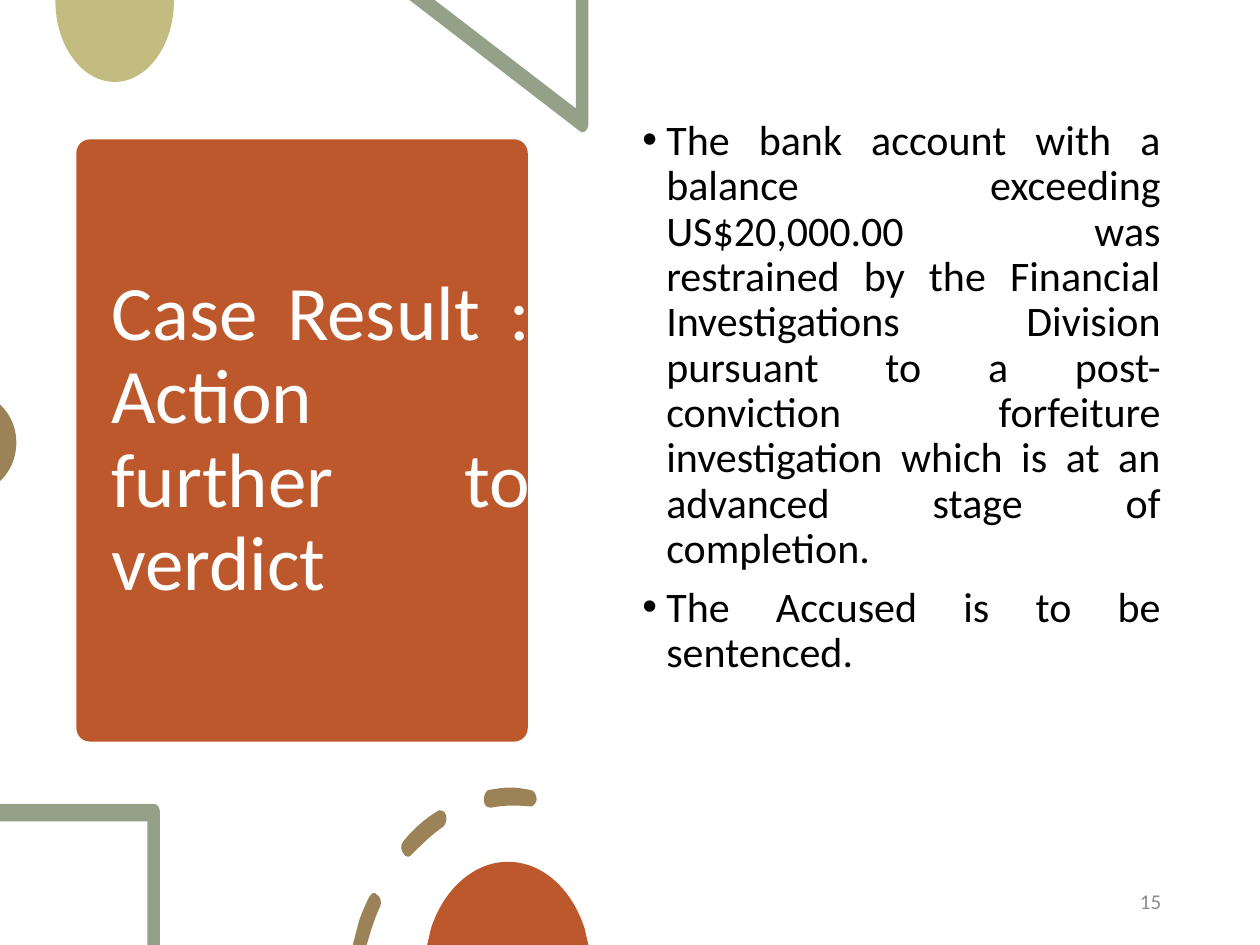
"""Build the case result slide with its decorative cut-off shapes."""
from dataclasses import dataclass

from lxml import etree
from pptx import Presentation
from pptx import util as u
from pptx.dml.color import RGBColor
from pptx.enum import shapes, text
from pptx.oxml.ns import qn

RUST, OLIVE, SAGE, BROWN = "BD582C", "C2BC80", "94A088", "9B8357"
WHITE, BLACK, GREY = "FFFFFF", "000000", "8C8C8C"
ALIGN, ANCHOR = text.PP_ALIGN, text.MSO_ANCHOR


@dataclass
class Ornament:
    """Closed outlines in inches: pairs are corners, sextuples are Bezier curves."""
    color: str
    outlines: list


ORNAMENTS = [
    Ornament(OLIVE, [[(1.38, 0), (0.44, 0), (0.44, 0.01),
                      (0.44, 0.36, 0.65, 0.65, 0.91, 0.65),
                      (1.17, 0.65, 1.38, 0.36, 1.38, 0.01)]]),
    Ornament(SAGE, [[(4.67, 0), (4.57, 0), (4.57, 0.86), (3.45, 0), (3.25, 0), (4.6, 1.04),
                     (4.61, 1.05, 4.61, 1.05, 4.62, 1.05),
                     (4.65, 1.05, 4.67, 1.02, 4.67, 0.98)]]),
    Ornament(BROWN, [[(0, 3.21), (0, 3.82), (0.01, 3.81),
                      (0.08, 3.74, 0.13, 3.64, 0.13, 3.51),
                      (0.13, 3.39, 0.08, 3.29, 0.01, 3.22)]]),
    Ornament(SAGE, [[(1.22, 6.38), (0, 6.38), (0, 6.52), (1.17, 6.52), (1.17, 7.5),
                     (1.27, 7.5), (1.27, 6.45), (1.27, 6.41, 1.25, 6.38, 1.22, 6.38)]]),
    Ornament(BROWN, [
        [(2.98, 7.09), (2.96, 7.08, 2.94, 7.1, 2.93, 7.12),
         (2.9, 7.18, 2.87, 7.25, 2.85, 7.31), (2.8, 7.5), (2.91, 7.5), (2.95, 7.37),
         (2.97, 7.31, 2.99, 7.25, 3.02, 7.19), (3.03, 7.16, 3.02, 7.11, 2.99, 7.1),
         (2.99, 7.09, 2.98, 7.09, 2.98, 7.09)],
        [(3.49, 6.43), (3.48, 6.43, 3.48, 6.43, 3.47, 6.44),
         (3.37, 6.5, 3.28, 6.58, 3.2, 6.68), (3.18, 6.7, 3.18, 6.75, 3.2, 6.77),
         (3.21, 6.79, 3.22, 6.8, 3.24, 6.8), (3.25, 6.8, 3.26, 6.79, 3.27, 6.78),
         (3.35, 6.7, 3.43, 6.62, 3.52, 6.56), (3.54, 6.54, 3.55, 6.5, 3.54, 6.47),
         (3.53, 6.44, 3.51, 6.43, 3.49, 6.43)],
        [(4.05, 6.25), (3.99, 6.25, 3.94, 6.26, 3.88, 6.27),
         (3.86, 6.27, 3.84, 6.31, 3.84, 6.35), (3.84, 6.38, 3.86, 6.41, 3.89, 6.41),
         (3.89, 6.41, 3.9, 6.41, 3.9, 6.41), (4, 6.39, 4.1, 6.39, 4.2, 6.4),
         (4.23, 6.41, 4.25, 6.38, 4.26, 6.35), (4.26, 6.31, 4.24, 6.27, 4.21, 6.27),
         (4.16, 6.26, 4.1, 6.25, 4.05, 6.25)]]),
    Ornament(RUST, [[(4.03, 6.84), (3.76, 6.84, 3.52, 7.06, 3.42, 7.37), (3.39, 7.5),
                     (4.67, 7.5), (4.64, 7.37), (4.54, 7.06, 4.31, 6.84, 4.03, 6.84)]]),
]

TITLE = "Case Result : Action further to verdict"
POINTS = [
    "The bank account with a balance exceeding US$20,000.00 was restrained by the "
    "Financial Investigations Division pursuant to a post-conviction forfeiture "
    "investigation which is at an advanced stage of completion.",
    "The Accused is to be sentenced.",
]


def rgb(color: str) -> RGBColor:
    """Turn a hex string into a colour."""
    return RGBColor.from_string(color)


def length(inches: float) -> u.Length:
    """Turn inches into a length."""
    return u.Cm(inches * 2.54)


def paint(sp, color: str) -> None:
    """Fill a shape flat, with neither line nor shadow."""
    sp.shadow.inherit = False
    sp.fill.solid()
    sp.fill.fore_color.rgb = rgb(color)
    sp.line.fill.background()


def end_point(part: tuple) -> tuple:
    """Return where a corner or curve ends."""
    return length(part[-2]), length(part[-1])


def bend(sp, parts: list) -> None:
    """Turn the straight segments that stand for curves into Bezier curves."""
    for segment, part in zip(list(sp.element.iter(qn("a:lnTo"))), parts):
        if len(part) == 2:
            continue
        segment.clear()
        curve = etree.SubElement(segment.getparent(), qn("a:cubicBezTo"))
        for x, y in zip(part[::2], part[1::2]):
            pt = etree.SubElement(curve, qn("a:pt"))
            pt.set("x", str(length(x) - sp.left))
            pt.set("y", str(length(y) - sp.top))
        segment.getparent().replace(segment, curve)


def add_ornament(s, ornament: Ornament) -> None:
    """Draw all outlines of an ornament as one freeform."""
    builder = None
    for start, *rest in ornament.outlines:
        if builder is None:
            builder = s.shapes.build_freeform(*end_point(start))
        else:
            builder.move_to(*end_point(start))
        builder.add_line_segments([end_point(part) for part in rest], close=True)
    sp = builder.convert_to_shape()
    bend(sp, [part for outline in ornament.outlines for part in outline[1:]])
    paint(sp, ornament.color)


def write(sp, lines: list, size: float, color: str, anchor, **formats) -> None:
    """Write paragraphs that share one format into a shape."""
    tf = sp.text_frame
    tf.word_wrap = True
    tf.auto_size = text.MSO_AUTO_SIZE.NONE
    tf.vertical_anchor = anchor
    for i, line in enumerate(lines):
        p = tf.paragraphs[0] if i == 0 else tf.add_paragraph()
        for name, value in formats.items():
            setattr(p, name, value)
        r = p.add_run()
        r.text = line
        for name, value in {"name": "Calibri", "size": u.Pt(size)}.items():
            setattr(r.font, name, value)
        r.font.color.rgb = rgb(color)


def add_bullet(p) -> None:
    """Give a paragraph a round bullet and a hanging indent."""
    pr = p._p.get_or_add_pPr()
    pr.set("marL", str(length(0.19)))
    pr.set("indent", str(-length(0.19)))
    etree.SubElement(pr, qn("a:buFont")).set("typeface", "Arial")
    etree.SubElement(pr, qn("a:buChar")).set("char", "•")


def main() -> None:
    """Build and save the slide."""
    prs = Presentation()
    prs.slide_width, prs.slide_height = u.Cm(25.4), u.Cm(19.05)
    s = prs.slides.add_slide(prs.slide_layouts[5])

    card = s.shapes.add_shape(shapes.MSO_SHAPE.ROUNDED_RECTANGLE,
                              u.Cm(1.54), u.Cm(2.81), u.Cm(9.1), u.Cm(12.14))
    card.adjustments[0] = 0.03
    paint(card, RUST)

    title = s.shapes.title
    box = {"left": 1.99, "top": 3.09, "width": 8.96, "height": 11.58}
    for name, value in box.items():
        setattr(title, name, u.Cm(value))
    title.element.addprevious(card.element)
    write(title, [TITLE], 44, WHITE, ANCHOR.MIDDLE, alignment=ALIGN.JUSTIFY, line_spacing=0.9)

    for ornament in ORNAMENTS:
        add_ornament(s, ornament)

    body = s.shapes.add_textbox(u.Cm(12.7), u.Cm(2.28), u.Cm(10.95), u.Cm(13.59))
    write(body, POINTS, 24, BLACK, ANCHOR.TOP, alignment=ALIGN.JUSTIFY,
          line_spacing=0.9, space_before=u.Pt(7.5))
    for p in body.text_frame.paragraphs:
        add_bullet(p)

    number = s.shapes.add_textbox(u.Cm(21.88), u.Cm(17.65), u.Cm(1.78), u.Cm(1.02))
    write(number, ["15"], 12, GREY, ANCHOR.MIDDLE, alignment=ALIGN.RIGHT, space_after=u.Pt(6))

    prs.save("out.pptx")


if __name__ == "__main__":
    main()
